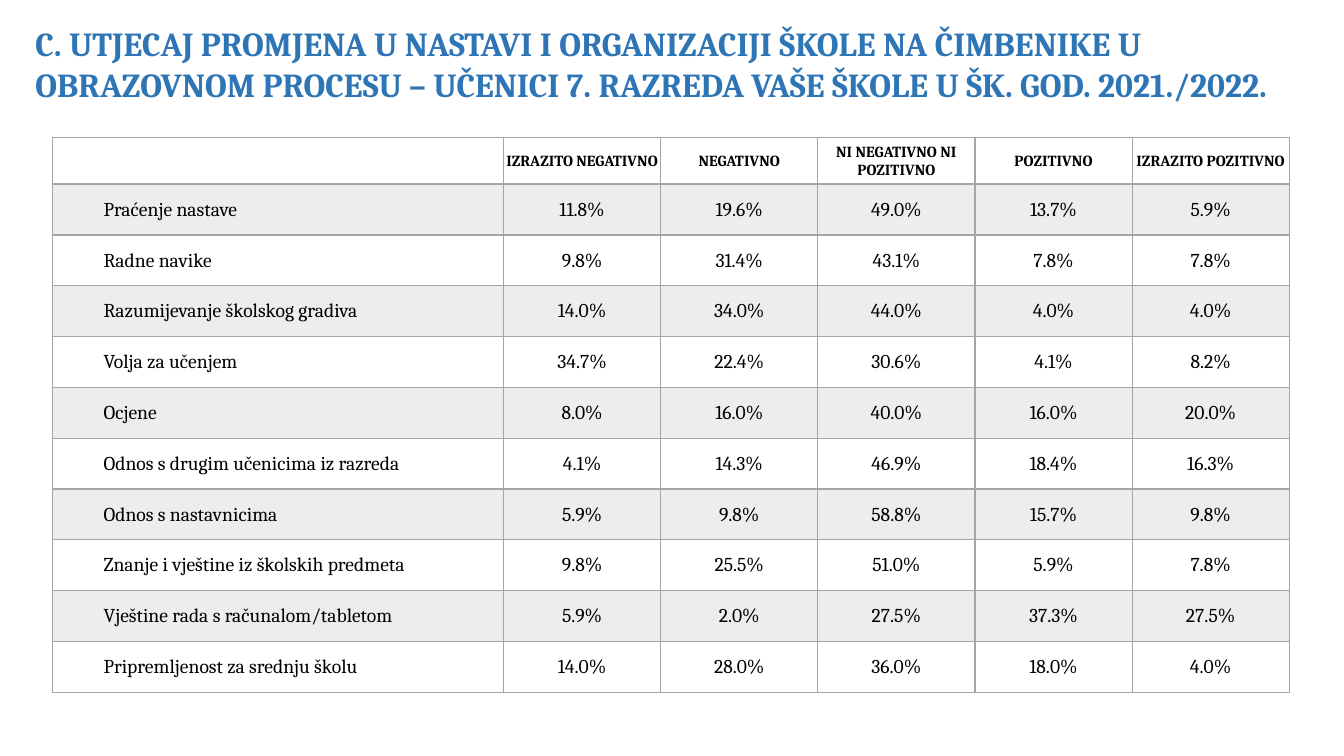
from pptx import Presentation
from pptx.dml.color import RGBColor
from pptx.enum.text import MSO_ANCHOR as Anchor, MSO_AUTO_SIZE as AutoSize, PP_ALIGN as Align
from pptx.oxml import parse_xml
from pptx.oxml.ns import nsdecls
from pptx.util import Cm, Pt

BLUE, BLACK, GREY = "2E75B5", "000000", "A5A5A5"
FONT = "Cambria"

TITLE = ("C. UTJECAJ PROMJENA U NASTAVI I ORGANIZACIJI ŠKOLE NA ČIMBENIKE U OBRAZOVNOM "
         "PROCESU – UČENICI 7. RAZREDA VAŠE ŠKOLE U ŠK. GOD. 2021./2022.")
HEADINGS = ["", "IZRAZITO NEGATIVNO", "NEGATIVNO", "NI NEGATIVNO NI POZITIVNO",
            "POZITIVNO", "IZRAZITO POZITIVNO"]
RATINGS = [
    ("Praćenje nastave", 11.8, 19.6, 49.0, 13.7, 5.9),
    ("Radne navike", 9.8, 31.4, 43.1, 7.8, 7.8),
    ("Razumijevanje školskog gradiva", 14.0, 34.0, 44.0, 4.0, 4.0),
    ("Volja za učenjem", 34.7, 22.4, 30.6, 4.1, 8.2),
    ("Ocjene", 8.0, 16.0, 40.0, 16.0, 20.0),
    ("Odnos s drugim učenicima iz razreda", 4.1, 14.3, 46.9, 18.4, 16.3),
    ("Odnos s nastavnicima", 5.9, 9.8, 58.8, 15.7, 9.8),
    ("Znanje i vještine iz školskih predmeta", 9.8, 25.5, 51.0, 5.9, 7.8),
    ("Vještine rada s računalom/tabletom", 5.9, 2.0, 27.5, 37.3, 27.5),
    ("Pripremljenost za srednju školu", 14.0, 28.0, 36.0, 18.0, 4.0),
]


def color(hex_value):
    return RGBColor.from_string(hex_value)


def format_text(paragraph, size, hex_value, bold):
    for run in paragraph.runs:
        run.font.name = FONT
        run.font.size = Pt(size)
        run.font.bold = bold
        run.font.color.rgb = color(hex_value)


def fill_cell(cell, shaded):
    """Give the cell a 20 % grey band or no fill."""
    if not shaded:
        cell.fill.background()
        return
    cell.fill.solid()
    cell.fill.fore_color.rgb = color(GREY)
    band = cell._tc.tcPr.find(".//{*}srgbClr")
    band.append(parse_xml(f'<a:alpha {nsdecls("a")} val="20000"/>'))


def border_cell(cell, bottom_width):
    """Draw grey borders; they precede the fill in the cell properties."""
    widths = {"lnL": 1, "lnR": 1, "lnT": 1, "lnB": bottom_width}
    for position, (side, width) in enumerate(widths.items()):
        cell._tc.tcPr.insert(position, parse_xml(
            f'<a:{side} {nsdecls("a")} w="{Pt(width)}"><a:solidFill>'
            f'<a:srgbClr val="{GREY}"/></a:solidFill></a:{side}>'))


def add_title(slide, left, top, width, height):
    title = slide.shapes.title
    title.left, title.top, title.width, title.height = left, top, width, height
    frame = title.text_frame
    frame.text = TITLE
    frame.word_wrap = True
    frame.auto_size = AutoSize.NONE
    frame.vertical_anchor = Anchor.TOP
    paragraph = frame.paragraphs[0]
    paragraph.alignment = Align.LEFT
    format_text(paragraph, 24, BLUE, True)


def write_cell(cell, text, is_header, is_label):
    cell.margin_left = cell.margin_top = cell.margin_right = Cm(0.02)
    cell.margin_bottom = 0
    cell.vertical_anchor = Anchor.MIDDLE
    paragraph = cell.text_frame.paragraphs[0]
    paragraph.text = text
    if is_label and not is_header:
        paragraph.level = 1
        properties = paragraph._p.get_or_add_pPr()
        properties.set("marL", str(Cm(1.27)))
        properties.set("indent", "0")
    else:
        paragraph.alignment = Align.CENTER
    format_text(paragraph, 11 if is_header else 14, BLACK, is_header)


def add_ratings_table(slide, left, top, width, height):
    rows = [HEADINGS] + [[label, *(f"{value:.1f}%" for value in values)]
                         for label, *values in RATINGS]
    table = slide.shapes.add_table(len(rows), len(HEADINGS), left, top, width, height).table
    table.first_row = table.horz_banding = False

    value_width, header_height = Cm(3.96), Cm(1.17)
    for index, column in enumerate(table.columns):
        column.width = value_width if index else width - value_width * (len(HEADINGS) - 1)
    for index, row in enumerate(table.rows):
        row.height = (height - header_height) // len(RATINGS) if index else header_height

    for row_index, texts in enumerate(rows):
        is_header = row_index == 0
        for column_index, text in enumerate(texts):
            cell = table.cell(row_index, column_index)
            write_cell(cell, text, is_header, column_index == 0)
            fill_cell(cell, row_index % 2 == 1)
            border_cell(cell, 2 if is_header else 1)


def main():
    presentation = Presentation()
    presentation.slide_width, presentation.slide_height = Cm(33.87), Cm(19.05)
    slide = presentation.slides.add_slide(presentation.slide_layouts[5])
    add_title(slide, Cm(0.64), Cm(0.46), Cm(33.23), Cm(2.31))
    add_ratings_table(slide, Cm(1.32), Cm(3.47), Cm(31.17), Cm(13.97))
    presentation.save("out.pptx")


if __name__ == "__main__":
    main()
